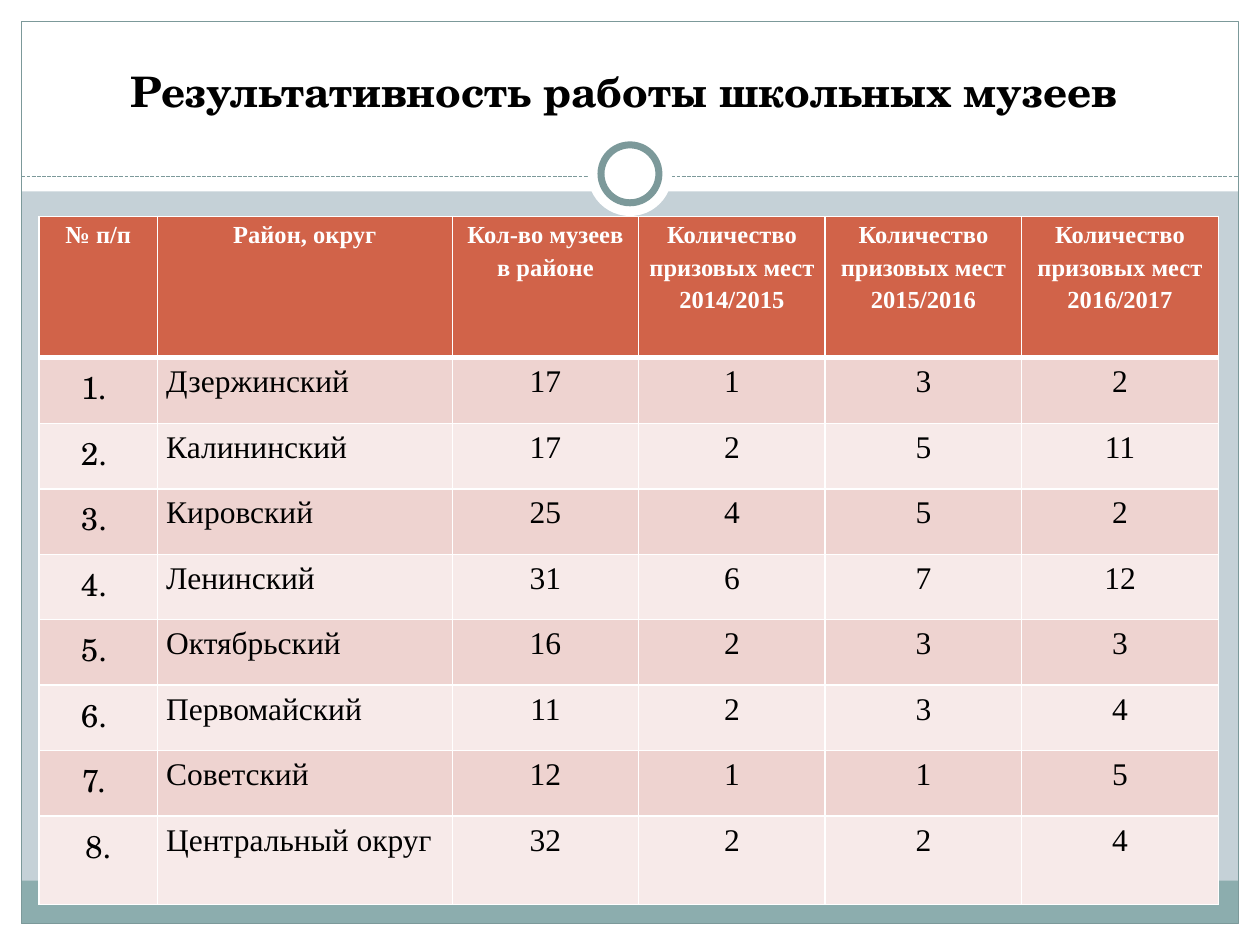
from lxml.etree import SubElement
from pptx import Presentation
from pptx.dml.color import RGBColor
from pptx.enum.dml import MSO_LINE
from pptx.enum.shapes import MSO_CONNECTOR, MSO_SHAPE
from pptx.enum.text import MSO_ANCHOR, MSO_AUTO_SIZE, PP_ALIGN
from pptx.oxml.ns import qn
from pptx.util import Inches, Pt

BACKGROUND = RGBColor(0xC5, 0xD1, 0xD7)
WHITE = RGBColor(0xFF, 0xFF, 0xFF)
BLACK = RGBColor(0x00, 0x00, 0x00)
TEAL = RGBColor(0x8C, 0xAD, 0xAE)
FRAME = RGBColor(0x7C, 0x99, 0x9A)
HEADER = RGBColor(0xD1, 0x63, 0x49)
DARK_BAND = RGBColor(0xEE, 0xD3, 0xD0)
LIGHT_BAND = RGBColor(0xF7, 0xEA, 0xE9)
SERIF = "Times New Roman"
SCHOOLBOOK = "TeX Gyre Schola"

presentation = Presentation()
presentation.slide_width = Inches(10)
presentation.slide_height = Inches(7.5)
COLUMN = presentation.slide_width // 100
ROW = presentation.slide_height // 75
slide = presentation.slides.add_slide(presentation.slide_layouts[6])
slide.background.fill.solid()
slide.background.fill.fore_color.rgb = BACKGROUND


def write_text(text_frame, text, font=SERIF, size=18, color=BLACK, bold=False,
               align=PP_ALIGN.LEFT, spacing=None):
    for index, line in enumerate(text.split("\n")):
        paragraph = text_frame.add_paragraph() if index else text_frame.paragraphs[0]
        paragraph.alignment = align
        if spacing:
            paragraph.line_spacing = spacing
        run = paragraph.add_run()
        run.text = line
        run.font.name = font
        run.font.size = Pt(size)
        run.font.bold = bold
        run.font.color.rgb = color


def add_block(preset, left, top, width, height, fill=None, line_width=None):
    shape = slide.shapes.add_shape(
        preset, int(left * COLUMN), int(top * ROW), int(width * COLUMN), int(height * ROW))
    shape.shadow.inherit = False
    if fill is None:
        shape.fill.background()
    else:
        shape.fill.solid()
        shape.fill.fore_color.rgb = fill
    if line_width is None:
        shape.line.fill.background()
    else:
        shape.line.color.rgb = FRAME
        shape.line.width = Pt(line_width)


MARGIN = 1.7
INNER_WIDTH = 100 - 2 * MARGIN
INNER_HEIGHT = 75 - 2 * MARGIN
for box in [(0, 75 - MARGIN, 100, MARGIN), (0, 0, 100, 15.2),
            (0, 0, MARGIN, 75), (100 - MARGIN, 0, MARGIN, 75)]:
    add_block(MSO_SHAPE.RECTANGLE, *box, fill=WHITE)
add_block(MSO_SHAPE.RECTANGLE, MARGIN, 69.9, INNER_WIDTH, 3.4, fill=TEAL)
add_block(MSO_SHAPE.RECTANGLE, MARGIN, MARGIN, INNER_WIDTH, INNER_HEIGHT, line_width=0.75)

divider = slide.shapes.add_connector(
    MSO_CONNECTOR.STRAIGHT, int(MARGIN * COLUMN), 14 * ROW,
    int((100 - MARGIN) * COLUMN), 14 * ROW)
divider.line.color.rgb = FRAME
divider.line.width = Pt(0.75)
divider.line.dash_style = MSO_LINE.SQUARE_DOT
SubElement(divider._element.spPr, qn("a:effectLst"))

for diameter, line_width in [(6.7, None), (4.6, 4)]:
    add_block(MSO_SHAPE.OVAL, 50 - diameter / 2, 13.8 - diameter / 2,
              diameter, diameter, fill=WHITE, line_width=line_width)

headings = ["№ п/п", "Район, округ", "Кол-во музеев в районе"]
headings += [f"Количество призовых мест\n{year}/{year + 1}" for year in (2014, 2015, 2016)]
districts = [
    ("Дзержинский", 17, 1, 3, 2),
    ("Калининский", 17, 2, 5, 11),
    ("Кировский", 25, 4, 5, 2),
    ("Ленинский", 31, 6, 7, 12),
    ("Октябрьский", 16, 2, 3, 3),
    ("Первомайский", 11, 2, 3, 4),
    ("Советский", 12, 1, 1, 5),
    ("Центральный округ", 32, 2, 2, 4),
]
records = [headings]
for number, district in enumerate(districts, 1):
    label = f"{number}." if number == len(districts) else f"{number}. "
    records.append([label, *district])

column_widths = [9.4, 23.4, 14.8, 14.8, 15.6, 15.6]
row_heights = [11.2] + [5.2] * 7 + [7]
table = slide.shapes.add_table(
    len(records), len(headings), int(3.1 * COLUMN), int(17.2 * ROW),
    int(sum(column_widths) * COLUMN), int(sum(row_heights) * ROW)).table
for column, width in zip(table.columns, column_widths):
    column.width = int(width * COLUMN)
for row, height in zip(table.rows, row_heights):
    row.height = int(height * ROW)

for row_index, record in enumerate(records):
    for column_index, value in enumerate(record):
        cell = table.cell(row_index, column_index)
        is_header = row_index == 0
        is_number = column_index == 0 and not is_header
        properties = cell._tc.get_or_add_tcPr()
        for side in ("L", "R", "T", "B"):
            is_thick = (row_index, side) in [(0, "B"), (1, "T")]
            border = SubElement(properties, qn(f"a:ln{side}"), w=str(Pt(3 if is_thick else 1)))
            border_fill = SubElement(border, qn("a:solidFill"))
            SubElement(border_fill, qn("a:srgbClr"), val=str(WHITE))
        cell.fill.solid()
        cell.fill.fore_color.rgb = (
            HEADER if is_header else DARK_BAND if row_index % 2 else LIGHT_BAND)
        cell.vertical_anchor = MSO_ANCHOR.TOP
        if not is_number:
            cell.margin_left = cell.margin_right = int(0.7 * COLUMN)
            cell.margin_top = cell.margin_bottom = 0
        is_district = column_index == 1 and not is_header
        write_text(cell.text_frame, str(value),
                   font=SCHOOLBOOK if is_number else SERIF,
                   size=14 if is_header else 18,
                   color=WHITE if is_header else BLACK, bold=is_header,
                   align=PP_ALIGN.JUSTIFY if is_district else PP_ALIGN.CENTER,
                   spacing=None if is_number else 1.2)

title = slide.shapes.add_textbox(
    int(9.4 * COLUMN), int(4.7 * ROW), 82 * COLUMN, 5 * ROW).text_frame
title.word_wrap = True
title.auto_size = MSO_AUTO_SIZE.SHAPE_TO_FIT_TEXT
write_text(title, "Результативность работы школьных музеев",
           font=SCHOOLBOOK, size=24, bold=True)

presentation.save("out.pptx")
